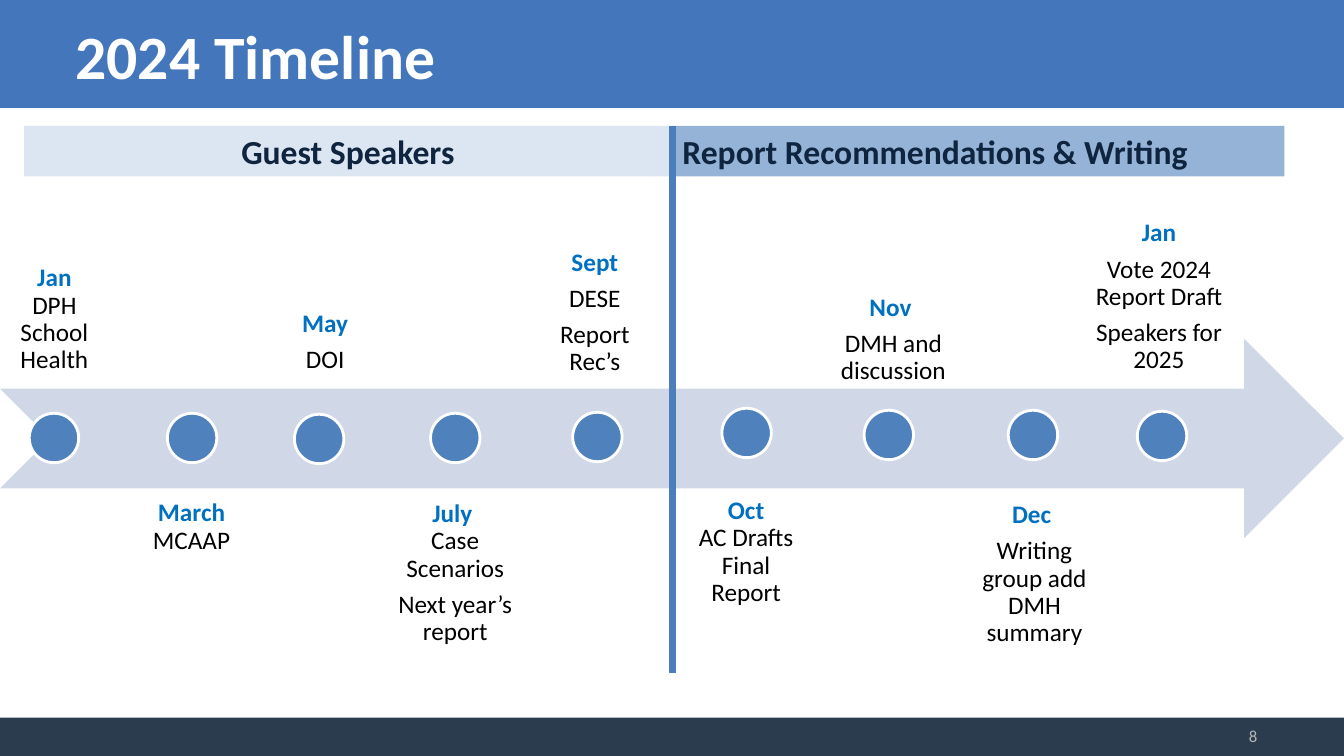
"""Build the 2024 timeline slide: a notched arrow with nine dated milestones."""
from dataclasses import dataclass

from lxml import etree
from pptx import Presentation
from pptx.dml.color import RGBColor
from pptx.enum.shapes import MSO_CONNECTOR, MSO_SHAPE
from pptx.enum.text import MSO_ANCHOR, MSO_AUTO_SIZE, PP_ALIGN
from pptx.oxml.ns import qn
from pptx.util import Inches, Pt

RECTANGLE, OVAL, ARROW = MSO_SHAPE.RECTANGLE, MSO_SHAPE.OVAL, MSO_SHAPE.NOTCHED_RIGHT_ARROW
LEFT, CENTER, RIGHT = PP_ALIGN.LEFT, PP_ALIGN.CENTER, PP_ALIGN.RIGHT
TOP, MIDDLE, BOTTOM = MSO_ANCHOR.TOP, MSO_ANCHOR.MIDDLE, MSO_ANCHOR.BOTTOM


@dataclass(frozen=True)
class Theme:
    font: str = "Calibri"
    title_bar: str = "4376BB"
    footer_bar: str = "2A3C4E"
    arrow: str = "D0D8E8"
    dot: str = "4F81BD"
    divider: str = "4B7EBC"
    speakers: str = "DCE6F2"
    writing: str = "95B3D7"
    heading: str = "0F243E"
    month: str = "0070C0"
    body: str = "000000"
    page: str = "B5B5B5"
    white: str = "FFFFFF"
    title_size: int = 44
    heading_size: int = 24
    body_size: int = 18
    page_size: int = 12


THEME = Theme()


def add_text(paragraph, text, *, size=THEME.body_size, color=THEME.body, bold=False, align=CENTER):
    """Append one formatted run to a paragraph."""
    paragraph.alignment = align
    run = paragraph.add_run()
    run.text = text
    run.font.name = THEME.font
    run.font.size = Pt(size)
    run.font.bold = bold
    run.font.color.rgb = RGBColor.from_string(color)


def add_block(slide, kind, box, fill):
    """Add a filled preset shape without outline or shadow."""
    shape = slide.shapes.add_shape(kind, *map(Inches, box))
    shape.shadow.inherit = False
    shape.fill.solid()
    shape.fill.fore_color.rgb = RGBColor.from_string(fill)
    shape.line.fill.background()
    return shape


presentation = Presentation()
presentation.slide_width = Inches(13.33)
presentation.slide_height = Inches(7.5)
slide = presentation.slides.add_slide(presentation.slide_layouts[5])

add_block(slide, RECTANGLE, (0, 0, 13.33, 1.07), THEME.title_bar)
add_block(slide, RECTANGLE, (0, 7.12, 13.33, 0.38), THEME.footer_bar)
add_block(slide, ARROW, (0, 3.36, 13.33, 1.98), THEME.arrow)

title = slide.shapes.title
title.left, title.top, title.width, title.height = map(Inches, (0.65, 0.06, 12, 0.96))
title.text_frame.vertical_anchor = MIDDLE
title.text_frame.auto_size = MSO_AUTO_SIZE.NONE
add_text(title.text_frame.paragraphs[0], "2024 Timeline", size=THEME.title_size,
         color=THEME.white, bold=True, align=LEFT)
title.element.getparent().append(title.element)

page_number = slide.shapes.add_textbox(*map(Inches, (9.58, 7.1, 2.99, 0.4)))
page_number.text_frame.word_wrap = True
page_number.text_frame.vertical_anchor = MIDDLE
add_text(page_number.text_frame.paragraphs[0], "8", size=THEME.page_size,
         color=THEME.page, align=RIGHT)

LABEL_HEIGHT = 1.98
LABEL_INSET = Inches(0.14)
DOT_SIZE = 0.49

# month, month shares a paragraph with the first item, items, label left/top/width, anchor, dot left/top
milestones = [
    ("Jan", True, ["DPH School Health"], (0.01, 1.87, 1.06), BOTTOM, (0.29, 4.1)),
    ("March", True, ["MCAAP"], (1.33, 4.82, 1.14), TOP, (1.66, 4.1)),
    ("May", False, ["DOI"], (2.79, 1.87, 0.87), BOTTOM, (2.92, 4.11)),
    ("July ", True, ["Case Scenarios", "Next year’s report"], (3.81, 4.83, 1.41), TOP, (4.27, 4.1)),
    ("Sept", False, ["DESE", "Report Rec’s"], (5.33, 1.89, 1.14), BOTTOM, (5.68, 4.09)),
    ("Oct", True, ["AC Drafts Final Report"], (6.75, 4.8, 1.3), TOP, (7.16, 4.05)),
    ("Nov ", False, ["DMH and discussion"], (8.15, 1.98, 1.42), BOTTOM, (8.57, 4.07)),
    ("Dec ", False, ["Writing group add DMH summary"], (9.48, 4.84, 1.56), TOP, (10, 4.07)),
    ("Jan", False, ["Vote 2024 Report Draft", "Speakers for 2025"], (10.62, 1.87, 1.75), BOTTOM,
     (11.28, 4.08)),
]

for month, shares_paragraph, items, label_place, anchor, dot_place in milestones:
    label = slide.shapes.add_textbox(*map(Inches, (*label_place, LABEL_HEIGHT)))
    frame = label.text_frame
    frame.word_wrap = True
    frame.vertical_anchor = anchor
    frame.margin_left = frame.margin_right = LABEL_INSET
    frame.margin_top = frame.margin_bottom = LABEL_INSET
    paragraph = frame.paragraphs[0]
    add_text(paragraph, month, color=THEME.month, bold=True)
    for index, item in enumerate(items):
        if shares_paragraph and index == 0:
            paragraph.add_line_break()
        else:
            paragraph = frame.add_paragraph()
        add_text(paragraph, item)
    for paragraph in frame.paragraphs:
        paragraph.line_spacing = 0.9
        paragraph.space_after = Pt(0.35 * THEME.body_size)

    dot = add_block(slide, OVAL, (*dot_place, DOT_SIZE, DOT_SIZE), THEME.dot)
    dot.line.color.rgb = RGBColor.from_string(THEME.white)
    dot.line.width = Pt(2)

phases = [
    ("Report Recommendations & Writing", 6.67, 6.07, THEME.writing, LEFT),
    ("Guest Speakers", 0.24, 6.42, THEME.speakers, CENTER),
]
for heading, left, width, fill, align in phases:
    banner = add_block(slide, RECTANGLE, (left, 1.25, width, 0.5), fill)
    banner.text_frame.word_wrap = True
    banner.text_frame.vertical_anchor = TOP
    add_text(banner.text_frame.paragraphs[0], heading, size=THEME.heading_size,
             color=THEME.heading, bold=True, align=align)

divider = slide.shapes.add_connector(MSO_CONNECTOR.STRAIGHT, *map(Inches, (6.67, 1.25, 6.67, 6.68)))
divider.line.color.rgb = RGBColor.from_string(THEME.divider)
divider.line.width = Pt(4.5)
etree.SubElement(divider.element.spPr, qn("a:effectLst"))

presentation.save("out.pptx")
